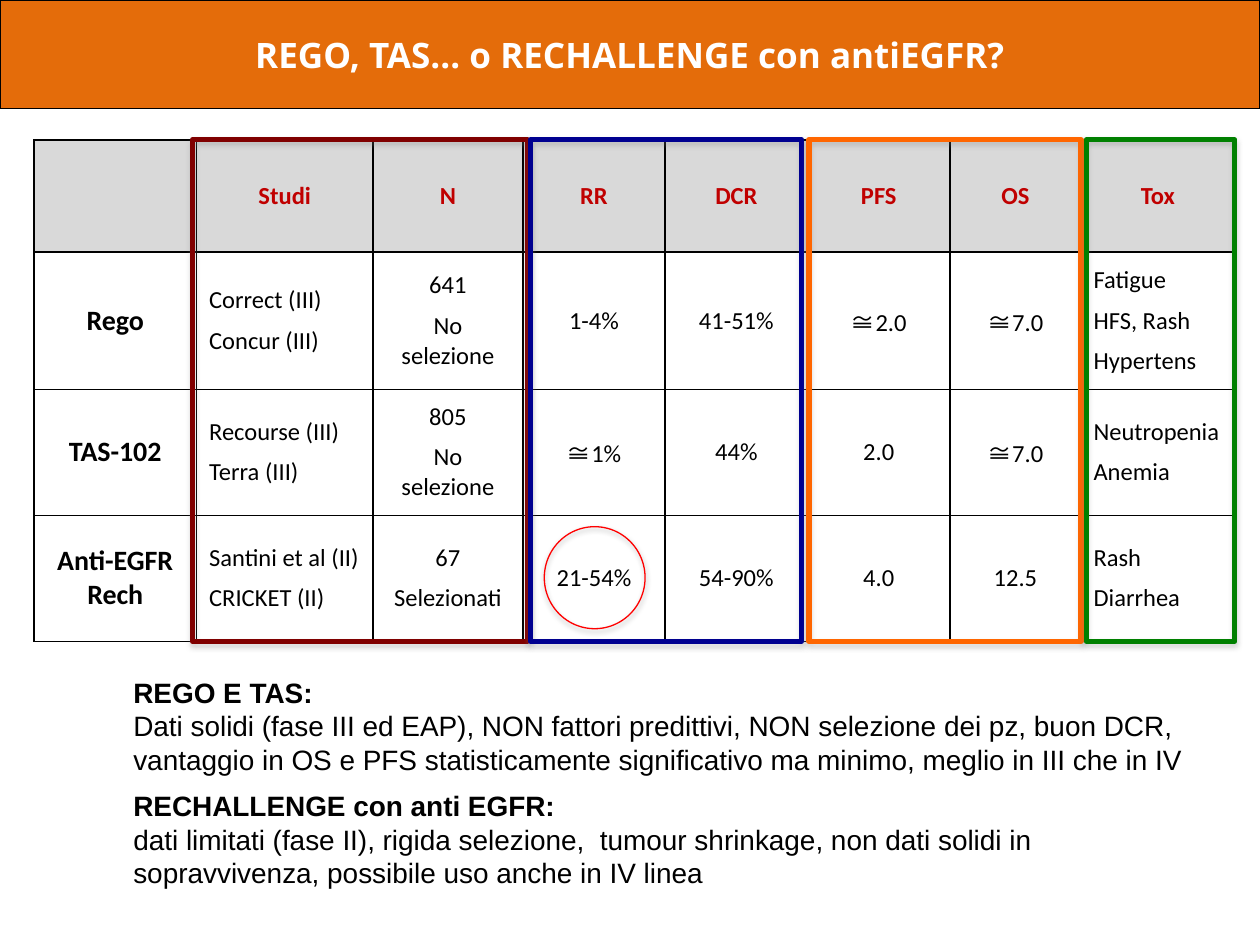
import pptx
import pptx.dml.color
import pptx.enum.shapes
import pptx.enum.text
import pptx.oxml
import pptx.oxml.ns
import pptx.util
from pptx.util import Inches

ALIGN = pptx.enum.text.PP_ALIGN
ANCHOR = pptx.enum.text.MSO_ANCHOR
SHAPES = pptx.enum.shapes.MSO_SHAPE
NAMESPACE = pptx.oxml.ns.nsdecls("a")

COLUMN_WIDTHS = [1.29, 1.4, 1.19, 1.13, 1.13, 1.13, 1.04, 1.22]
ROW_HEIGHTS = [0.89, 1.09, 1, 1]
LEFT_ALIGNED_COLUMNS = (1, 7)
TABLE_ROWS = [
    ["", "Studi", "N", "RR", "DCR", "PFS", "OS", "Tox"],
    ["Rego", "Correct (III)\nConcur (III)", "641\nNo selezione", "1-4%", "41-51%",
     "≅2.0", "≅7.0", "Fatigue\nHFS, Rash\nHypertens"],
    ["TAS-102", "Recourse (III)\nTerra (III)", "805\nNo selezione", "≅1%", "44%",
     "2.0", "≅7.0", "Neutropenia\nAnemia"],
    ["Anti-EGFR Rech", "Santini et al (II)\nCRICKET (II)", "67\nSelezionati", "21-54%",
     "54-90%", "4.0", "12.5", "Rash\nDiarrhea"],
]
COLUMN_FRAMES = [
    (1.53, 2.66, "800000"),
    (4.21, 2.15, "000090"),
    (6.42, 2.16, "FF6600"),
    (8.62, 1.18, "008000"),
]
COMMENTS = [
    ("REGO E TAS:",
     "Dati solidi (fase III ed EAP), NON fattori predittivi, NON selezione dei pz, buon DCR, "
     "vantaggio in OS e PFS statisticamente significativo ma minimo, meglio in III che in IV"),
    ("RECHALLENGE con anti EGFR:",
     "dati limitati (fase II), rigida selezione,  tumour shrinkage, non dati solidi in "
     "sopravvivenza, possibile uso anche in IV linea"),
]


def color(value):
    return pptx.dml.color.RGBColor.from_string(value)


def set_fill(fill, value):
    if value:
        fill.solid()
        fill.fore_color.rgb = color(value)
    else:
        fill.background()


def write_text(paragraph, text, size=14, font="Calibri", text_color="000000", bold=False,
               align=ALIGN.LEFT, space_after=0):
    paragraph.alignment = align
    paragraph.space_after = pptx.util.Pt(space_after)
    pieces = ["≅", text[1:]] if text.startswith("≅") else [text]
    for piece in pieces:
        run = paragraph.add_run()
        run.text = piece
        run.font.name = "Noto Sans CJK JP" if piece == "≅" else font
        run.font.size = pptx.util.Pt(size)
        run.font.bold = bold
        run.font.color.rgb = color(text_color)


def add_borders(cell):
    properties = cell._tc.get_or_add_tcPr()
    for position, side in enumerate(("lnL", "lnR", "lnT", "lnB")):
        properties.insert(position, pptx.oxml.parse_xml(
            f'<a:{side} {NAMESPACE} w="12700"><a:solidFill><a:srgbClr val="000000"/>'
            f'</a:solidFill></a:{side}>'))


def cell_format(row, column):
    if row == 0:
        return {"bold": True, "text_color": "C00000", "align": ALIGN.CENTER}
    if column == 0:
        return {"bold": True, "size": 16, "align": ALIGN.CENTER}
    align = ALIGN.LEFT if column in LEFT_ALIGNED_COLUMNS else ALIGN.CENTER
    return {"align": align, "space_after": 6}


def add_comparison_table(slide):
    table = slide.shapes.add_table(
        len(ROW_HEIGHTS), len(COLUMN_WIDTHS), Inches(0.27), Inches(1.11),
        Inches(sum(COLUMN_WIDTHS)), Inches(sum(ROW_HEIGHTS))).table
    table.first_row = table.horz_banding = False
    for column, width in zip(table.columns, COLUMN_WIDTHS):
        column.width = Inches(width)
    for row, height in zip(table.rows, ROW_HEIGHTS):
        row.height = Inches(height)
    for row, texts in enumerate(TABLE_ROWS):
        for column, text in enumerate(texts):
            cell = table.cell(row, column)
            cell.vertical_anchor = ANCHOR.MIDDLE
            set_fill(cell.fill, "D9D9D9" if row == 0 else None)
            add_borders(cell)
            for index, line in enumerate(text.split("\n") if text else []):
                frame = cell.text_frame
                paragraph = frame.add_paragraph() if index else frame.paragraphs[0]
                write_text(paragraph, line, **cell_format(row, column))


def add_shape(slide, kind, left, top, width, height, fill=None, line=None, line_width=0.75):
    shape = slide.shapes.add_shape(
        kind, Inches(left), Inches(top), Inches(width), Inches(height))
    shape.shadow.inherit = False
    set_fill(shape.fill, fill)
    set_fill(shape.line.fill, line)
    if line:
        shape.line.width = pptx.util.Pt(line_width)
    return shape


def add_shadow(shape, shadow_color):
    effects = shape._element.spPr.find(pptx.oxml.ns.qn("a:effectLst"))
    effects.append(pptx.oxml.parse_xml(
        f'<a:outerShdw {NAMESPACE} blurRad="40000" dist="23000" dir="5400000" rotWithShape="0">'
        f'<a:srgbClr val="{shadow_color}"><a:alpha val="35000"/></a:srgbClr></a:outerShdw>'))


def add_title_band(slide, text):
    band = add_shape(slide, SHAPES.RECTANGLE, 0, 0, 10, 0.86, fill="E46C0A", line="000000")
    band.text_frame.vertical_anchor = ANCHOR.MIDDLE
    write_text(band.text_frame.paragraphs[0], text, size=20, font="Open Sans",
               text_color="FFFFFF", bold=True, align=ALIGN.CENTER)


def add_comment(slide, top, heading, body):
    box = add_shape(slide, SHAPES.RECTANGLE, 0.96, top, 8.63, 0.91, fill="FFFFFF")
    frame = box.text_frame
    frame.word_wrap = True
    frame.auto_size = pptx.enum.text.MSO_AUTO_SIZE.SHAPE_TO_FIT_TEXT
    frame.vertical_anchor = ANCHOR.TOP
    write_text(frame.paragraphs[0], heading, size=16, font="Arial", bold=True)
    write_text(frame.add_paragraph(), body, size=16, font="Arial")


def main():
    presentation = pptx.Presentation()
    presentation.slide_width = Inches(10)
    presentation.slide_height = Inches(7.5)
    slide = presentation.slides.add_slide(presentation.slide_layouts[6])
    add_comparison_table(slide)
    for left, width, line in COLUMN_FRAMES:
        frame = add_shape(slide, SHAPES.RECTANGLE, left, 1.11, width, 3.98,
                          line=line, line_width=3)
        add_shadow(frame, "808080")
    add_title_band(slide, "REGO, TAS… o RECHALLENGE con antiEGFR?")
    for index, (heading, body) in enumerate(COMMENTS):
        add_comment(slide, 5.31 + 0.9 * index, heading, body)
    response_circle = add_shape(slide, SHAPES.OVAL, 4.32, 4.18, 0.8, 0.81, line="FF0000")
    add_shadow(response_circle, "000000")
    presentation.save("out.pptx")


if __name__ == "__main__":
    main()
